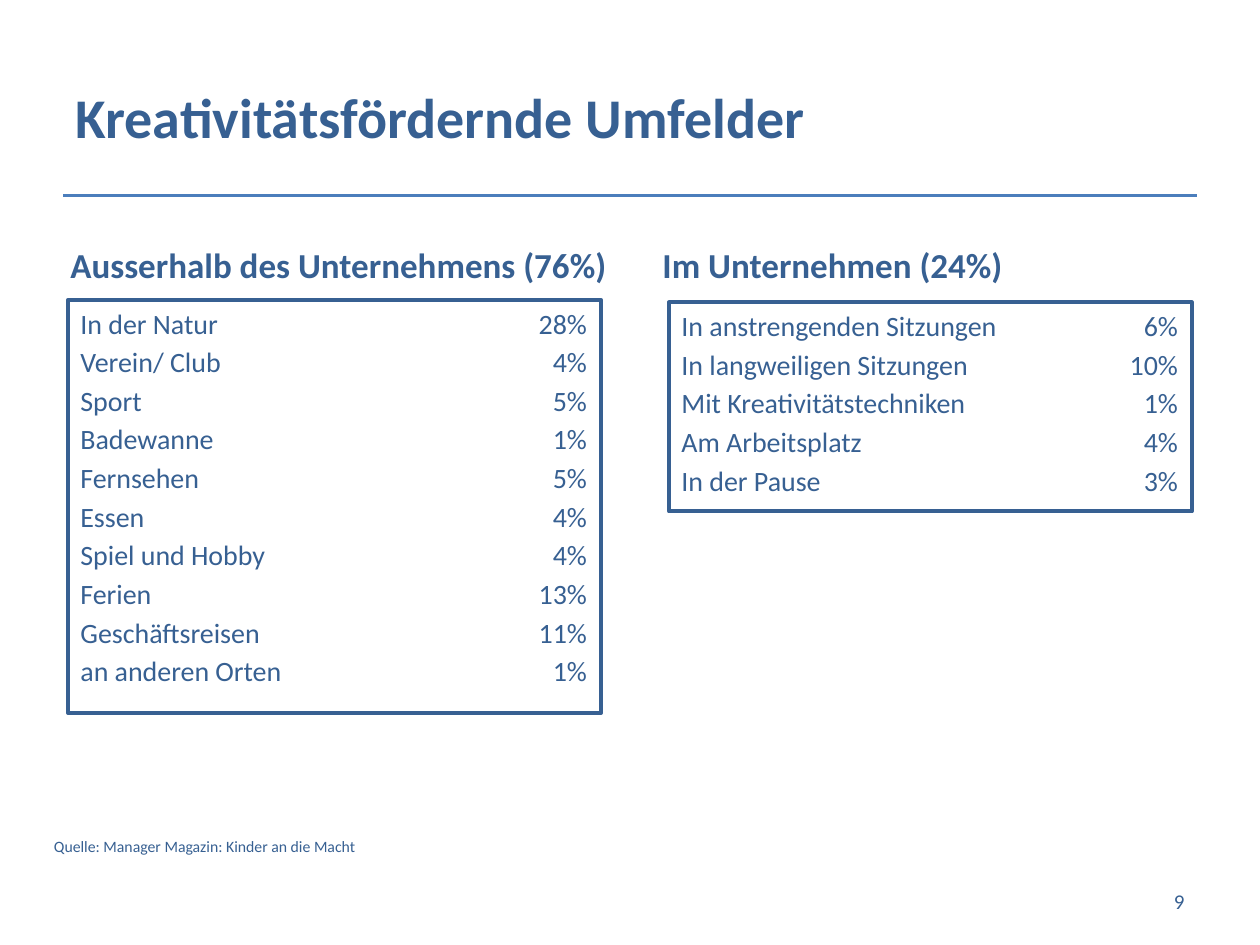
from lxml import etree
from pptx import Presentation
from pptx.dml.color import RGBColor
from pptx.enum.shapes import MSO_CONNECTOR, MSO_SHAPE
from pptx.enum.text import MSO_ANCHOR as ANCHOR, PP_ALIGN as ALIGN
from pptx.oxml.ns import qn
from pptx.util import Inches, Pt

BLUE = "376092"
RULE_BLUE = "4B7EBC"
INSET = 0.1

OUTSIDE = [
    ("In der Natur", 28), ("Verein/ Club", 4), ("Sport", 5), ("Badewanne", 1),
    ("Fernsehen", 5), ("Essen", 4), ("Spiel und Hobby", 4), ("Ferien", 13),
    ("Geschäftsreisen", 11), ("an anderen Orten", 1),
]
INSIDE = [
    ("In anstrengenden Sitzungen", 6), ("In langweiligen Sitzungen", 10),
    ("Mit Kreativitätstechniken", 1), ("Am Arbeitsplatz", 4), ("In der Pause", 3),
]


def color(hex_text):
    return RGBColor.from_string(hex_text)


def write(p, text, size, bold=False, align=ALIGN.LEFT):
    p.alignment = align
    r = p.add_run()
    r.text = text
    r.font.name = "Calibri"
    r.font.size = Pt(size)
    r.font.bold = bold
    r.font.color.rgb = color(BLUE)


def add_text(slide, box, text, anchor=ANCHOR.TOP, wrap=True, **text_format):
    tf = slide.shapes.add_textbox(*map(Inches, box)).text_frame
    tf.word_wrap = wrap
    tf.vertical_anchor = anchor
    write(tf.paragraphs[0], text, **text_format)


def add_right_tab(p, position):
    tabs = etree.SubElement(p._p.get_or_add_pPr(), qn("a:tabLst"))
    etree.SubElement(tabs, qn("a:tab"), pos=str(Inches(position)), algn="r")


def add_rule(slide, left, top, width):
    line = slide.shapes.add_connector(
        MSO_CONNECTOR.STRAIGHT, *map(Inches, (left, top, left + width, top)))
    line.line.color.rgb = color(RULE_BLUE)
    line.line.width = Pt(1.5)
    etree.SubElement(line._element.spPr, qn("a:effectLst"))


def add_share_list(slide, box, rows):
    """Framed list of places with right-aligned percentages."""
    sp = slide.shapes.add_shape(MSO_SHAPE.RECTANGLE, *map(Inches, box))
    sp.shadow.inherit = False
    sp.fill.background()
    sp.line.color.rgb = color(BLUE)
    sp.line.width = Pt(2.25)
    tf = sp.text_frame
    tf.word_wrap = True
    tf.vertical_anchor = ANCHOR.TOP
    for i, (place, share) in enumerate(rows):
        p = tf.add_paragraph() if i else tf.paragraphs[0]
        add_right_tab(p, box[2] - 2 * INSET - 0.01)
        p.space_after = Pt(2.9)
        write(p, f"{place}\t{share}%", size=16)


def add_header(slide, left, top, width, height):
    add_rule(slide, left, top + height, width)
    add_text(slide, (left, top, width, height), "Kreativitätsfördernde Umfelder",
             anchor=ANCHOR.MIDDLE, size=32, bold=True)


def add_footer(slide, left, top):
    add_text(slide, (left, top, 3.67, 0.25),
             "Quelle: Manager Magazin: Kinder an die Macht", size=9)
    add_text(slide, (left + 6.84, top + 0.36, 2.33, 0.4), "9",
             anchor=ANCHOR.MIDDLE, size=12, align=ALIGN.RIGHT)


def main():
    prs = Presentation()
    prs.slide_width, prs.slide_height = Inches(10), Inches(7.5)
    slide = prs.slides.add_slide(prs.slide_layouts[6])
    add_header(slide, 0.5, 0.3, 9, 1.25)
    add_text(slide, (0.46, 1.88, 4.46, 0.44),
             "Ausserhalb des Unternehmens (76%)", size=20, bold=True)
    add_share_list(slide, (0.54, 2.38, 4.23, 3.28), OUTSIDE)
    add_text(slide, (5.16, 1.88, 2.93, 0.44),
             "Im Unternehmen (24%)", wrap=False, size=20, bold=True)
    add_share_list(slide, (5.31, 2.4, 4.15, 1.66), INSIDE)
    add_footer(slide, 0.33, 6.59)
    prs.save("out.pptx")


if __name__ == "__main__":
    main()
